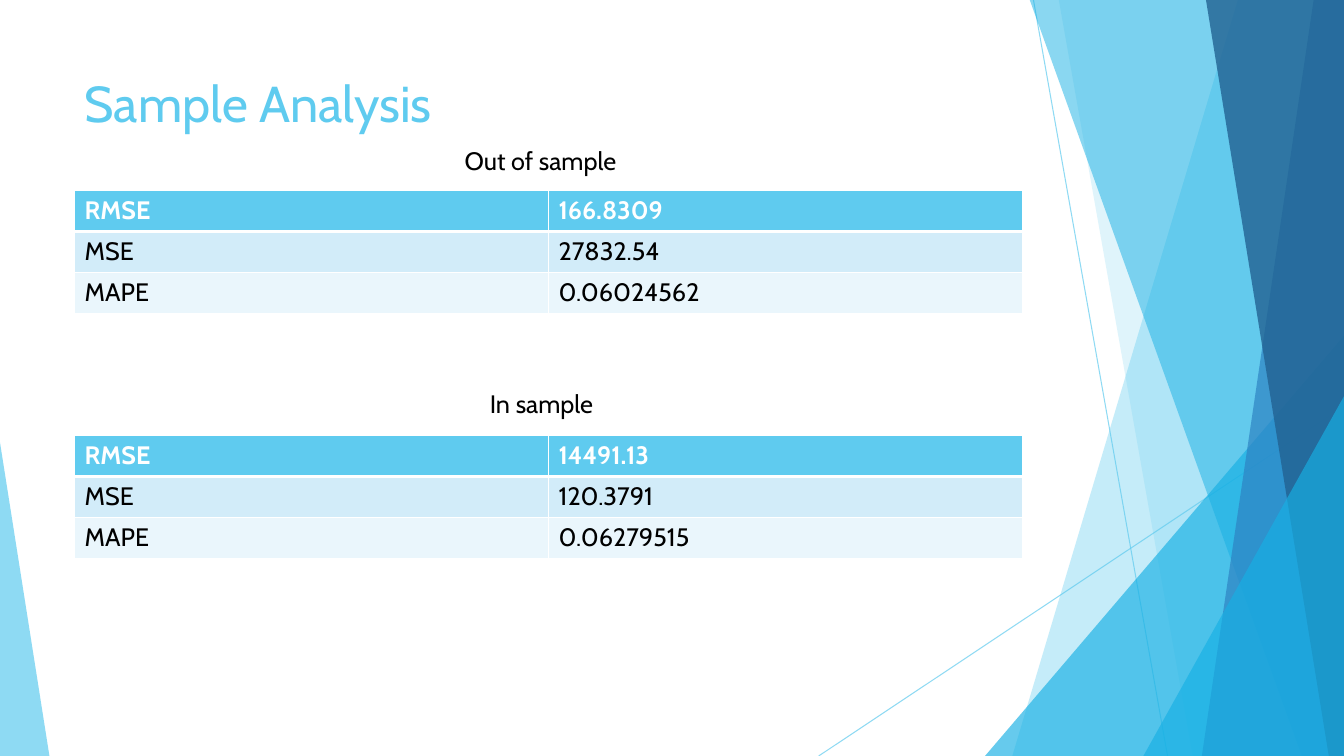
from lxml.etree import SubElement
from pptx import Presentation
from pptx.dml.color import RGBColor
from pptx.enum.shapes import MSO_CONNECTOR, MSO_SHAPE
from pptx.enum.text import MSO_ANCHOR
from pptx.oxml.ns import qn
from pptx.util import Inches, Pt

SKY = RGBColor(0x5F, 0xCB, 0xEF)
CYAN = RGBColor(0x17, 0xB0, 0xE4)
BLUE = RGBColor(0x2E, 0x83, 0xC3)
NAVY = RGBColor(0x22, 0x62, 0x92)
BAND_DARK = RGBColor(0xD2, 0xEC, 0xF9)
BAND_LIGHT = RGBColor(0xEA, 0xF6, 0xFC)
WHITE = RGBColor(0xFF, 0xFF, 0xFF)
BLACK = RGBColor(0, 0, 0)
WIDTH, HEIGHT = 13.33, 7.5


class SlideBuilder:
    """Draws styled elements on the current slide."""

    def __init__(self, slide, font="Cabin"):
        self.slide = slide
        self.shapes = slide.shapes
        self.font = font

    def set_alpha(self, parent, percent):
        color = parent.find(".//" + qn("a:srgbClr"))
        SubElement(color, qn("a:alpha"), val=str(percent * 1000))

    def style_facet(self, facet, color, opacity):
        facet.shadow.inherit = False
        facet.fill.solid()
        facet.fill.fore_color.rgb = color
        self.set_alpha(facet.fill._xPr, opacity)
        facet.line.fill.background()

    def ray(self, x1, y1, x2, y2):
        ray = self.shapes.add_connector(
            MSO_CONNECTOR.STRAIGHT, Inches(x1), Inches(y1), Inches(x2), Inches(y2))
        ray.line.color.rgb = SKY
        ray.line.width = Pt(0.75)
        properties = ray._element.spPr
        self.set_alpha(properties, 70)
        SubElement(properties, qn("a:effectLst"))

    def panel(self, top_x, bottom_x, color, opacity):
        outline = self.shapes.build_freeform(Inches(top_x), Inches(-0.01))
        corners = [(WIDTH, -0.01), (WIDTH, HEIGHT), (bottom_x, HEIGHT)]
        outline.add_line_segments([(Inches(x), Inches(y)) for x, y in corners])
        self.style_facet(outline.convert_to_shape(), color, opacity)

    def wedge(self, left, top, width, apex, color, opacity):
        wedge = self.shapes.add_shape(
            MSO_SHAPE.ISOSCELES_TRIANGLE, Inches(left), Inches(top),
            Inches(width), Inches(HEIGHT - top))
        wedge.adjustments[0] = apex
        self.style_facet(wedge, color, opacity)

    def format_runs(self, text_frame, size, color, bold=False):
        for run in text_frame.paragraphs[0].runs:
            run.font.name = self.font
            run.font.size = Pt(size)
            run.font.bold = bold
            run.font.color.rgb = color

    def text(self, words, left, top, width, height, size, color):
        box = self.shapes.add_textbox(
            Inches(left), Inches(top), Inches(width), Inches(height))
        frame = box.text_frame
        frame.word_wrap = True
        frame.vertical_anchor = MSO_ANCHOR.TOP
        frame.text = words
        self.format_runs(frame, size, color)

    def borders(self, cell, top, bottom):
        properties = cell._tc.get_or_add_tcPr()
        for side, points in (("L", 1), ("R", 1), ("T", top), ("B", bottom)):
            border = SubElement(properties, qn(f"a:ln{side}"), w=str(Pt(points)))
            fill = SubElement(border, qn("a:solidFill"))
            SubElement(fill, qn("a:srgbClr"), val=str(WHITE))

    def table(self, rows, left, top, width, height):
        table = self.shapes.add_table(
            len(rows), len(rows[0]), Inches(left), Inches(top),
            Inches(width), Inches(height)).table
        looks = [(SKY, WHITE, True, 1, 3), (BAND_DARK, BLACK, False, 3, 1),
                 (BAND_LIGHT, BLACK, False, 1, 1)]
        for r, (values, look) in enumerate(zip(rows, looks)):
            fill, color, bold, above, below = look
            for c, value in enumerate(values):
                cell = table.cell(r, c)
                self.borders(cell, above, below)
                cell.fill.solid()
                cell.fill.fore_color.rgb = fill
                cell.text_frame.text = value
                self.format_runs(cell.text_frame, 18, color, bold)


def draw_backdrop(builder):
    """Draws the overlapping facets at the slide's edges."""
    builder.ray(10.25, 0, 11.58, HEIGHT)
    builder.ray(WIDTH, 4.03, 8.12, HEIGHT)
    builder.panel(12.28, 10.04, SKY, 36)
    builder.panel(10.5, 11.83, SKY, 20)
    builder.wedge(9.77, 3.33, 3.56, 1, CYAN, 66)
    builder.panel(10.21, 12.91, CYAN, 50)
    builder.panel(13.03, 11.92, BLUE, 70)
    builder.panel(11.96, 13.18, NAVY, 80)
    builder.wedge(11.34, 3.93, 1.99, 1, CYAN, 66)
    builder.wedge(0, 4.39, 0.49, 0, SKY, 70)


def main():
    """Builds and saves the sample analysis slide."""
    deck = Presentation()
    deck.slide_width, deck.slide_height = Inches(WIDTH), Inches(HEIGHT)
    builder = SlideBuilder(deck.slides.add_slide(deck.slide_layouts[6]))
    draw_backdrop(builder)
    builder.text("Sample Analysis", 0.74, 0.67, 9.4, 1.44, 36, SKY)
    metrics = ("RMSE", "MSE", "MAPE")
    samples = [
        ("Out of sample", 4.51, 1.39, 1.89, ("166.8309", "27832.54", "0.06024562")),
        ("In sample", 4.76, 3.8, 4.32, ("14491.13", "120.3791", "0.06279515")),
    ]
    for caption, caption_left, caption_top, table_top, scores in samples:
        builder.table(list(zip(metrics, scores)), 0.74, table_top, 9.4, 1.22)
        builder.text(caption, caption_left, caption_top, 1.9, 0.4, 18, BLACK)
    deck.save("out.pptx")


if __name__ == "__main__":
    main()
